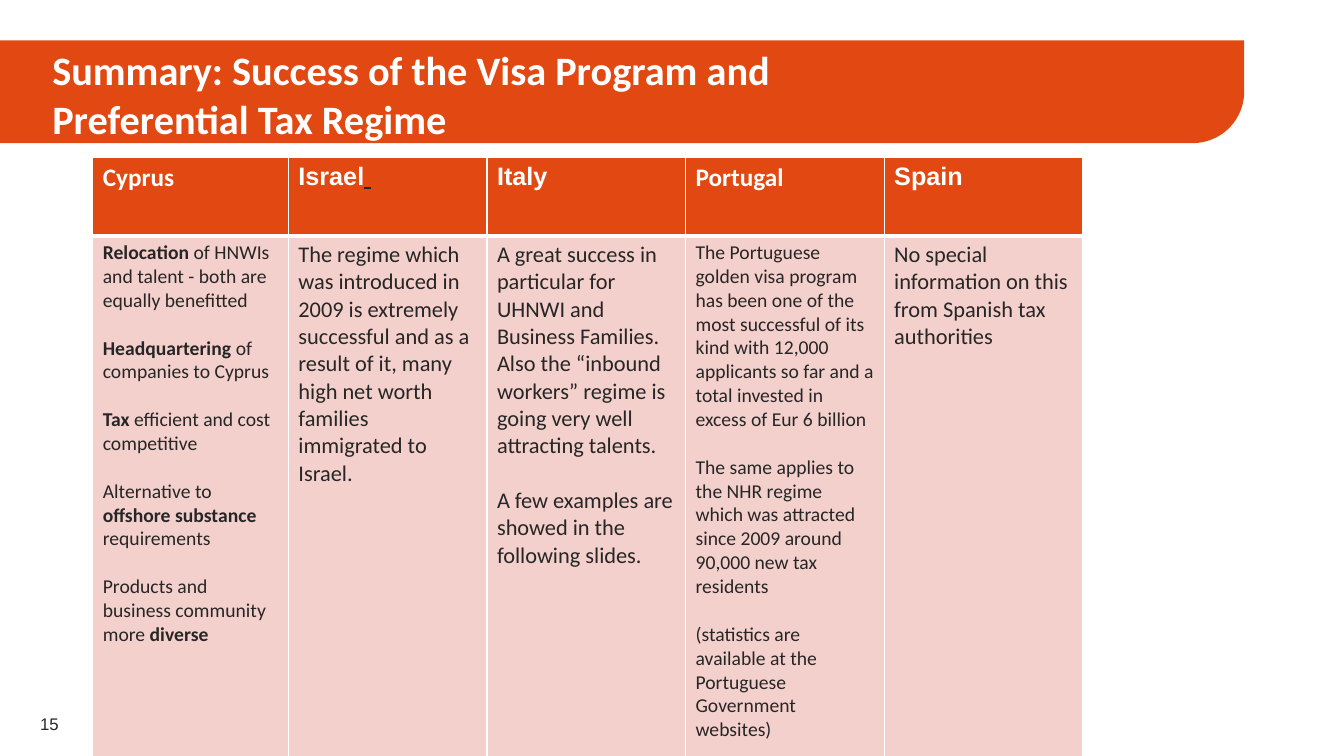
"""Build a summary slide comparing visa programs and tax regimes by country."""
import pptx
import pptx.dml.color
import pptx.enum.shapes
import pptx.enum.text
import pptx.oxml
import pptx.oxml.ns
import pptx.util

Inches = pptx.util.Inches
Pt = pptx.util.Pt
ANCHOR = pptx.enum.text.MSO_ANCHOR

COLORS = {"accent": "E24912", "cell": "F4D0CC", "text": "262626", "white": "FFFFFF"}
LINE_HEIGHT = 1.22

HEADERS = [
    ("Calibri", ["Cyprus"]),
    ("Arial", ["Israel", " "]),
    ("Arial", ["Italy"]),
    ("Calibri", ["Portugal"]),
    ("Arial", ["Spain"]),
]
BODIES = [
    (14, [
        "*Relocation* of HNWIs and talent - both are equally benefitted",
        "*Headquartering* of companies to Cyprus",
        "*Tax* efficient and cost competitive",
        "Alternative to *offshore substance *requirements",
        "Products and business community more *diverse*",
    ]),
    (16, [
        "The regime which was introduced in 2009 is extremely successful and as a "
        "result of it, many high net worth families immigrated to Israel.",
    ]),
    (16, [
        "A great success in particular for UHNWI and Business Families. Also the "
        "“inbound workers” regime is going very well attracting talents.",
        "A few examples are showed in the following slides.",
    ]),
    (14, [
        "The Portuguese golden visa program has been one of the most successful of its "
        "kind with 12,000 applicants so far and a total invested in excess of Eur 6 billion",
        "The same applies to the NHR regime which was attracted since 2009 around "
        "90,000 new tax residents",
        "(statistics are available at the Portuguese Government websites)",
    ]),
    (16, ["No special information on this from Spanish tax authorities"]),
]


class SlideBuilder:
    """Hold the style and current slide and add each kind of element."""

    def __init__(self, prs):
        self.slide = prs.slides.add_slide(prs.slide_layouts[6])

    def color(self, name):
        return pptx.dml.color.RGBColor.from_string(COLORS[name])

    def run(self, p, text, color, **formats):
        r = p.add_run()
        r.text = text
        r.font.color.rgb = self.color(color)
        for name, value in formats.items():
            setattr(r.font, name, value)

    def banner(self, left, top, width, height):
        kind = pptx.enum.shapes.MSO_SHAPE.ROUND_1_RECTANGLE
        sp = self.slide.shapes.add_shape(
            kind, Inches(left), Inches(top), Inches(width), Inches(height))
        sp.adjustments[0] = 0.5
        sp.shadow.inherit = False
        sp.fill.solid()
        sp.fill.fore_color.rgb = self.color("accent")
        sp.line.fill.background()
        sp._element.spPr.get_or_add_xfrm().set("flipV", "1")

    def text(self, left, top, width, height, text, color, **formats):
        sp = self.slide.shapes.add_textbox(
            Inches(left), Inches(top), Inches(width), Inches(height))
        tf = sp.text_frame
        tf.word_wrap = True
        tf.vertical_anchor = ANCHOR.MIDDLE
        self.run(tf.paragraphs[0], text, color, **formats)

    def table(self, left, top, widths, heights):
        frame = self.slide.shapes.add_table(
            len(heights), len(widths), Inches(left), Inches(top),
            Inches(sum(widths)), Inches(sum(heights)))
        table = frame.table
        table.horz_banding = False
        for column, width in zip(table.columns, widths):
            column.width = Inches(width)
        for row, height in zip(table.rows, heights):
            row.height = Inches(height)
        return table

    def style_cell(self, cell, fill, **borders):
        cell.fill.solid()
        cell.fill.fore_color.rgb = self.color(fill)
        tc_pr = cell._tc.get_or_add_tcPr()
        for i, side in enumerate("LRTB"):
            width = Pt(borders.get(side, 1))
            tc_pr.insert(i, pptx.oxml.parse_xml(
                f'<a:ln{side} {pptx.oxml.ns.nsdecls("a")} w="{width}"><a:solidFill>'
                f'<a:srgbClr val="{COLORS["white"]}"/></a:solidFill></a:ln{side}>'))

    def header_cell(self, cell, font, texts):
        self.style_cell(cell, "accent", B=3)
        p = cell.text_frame.paragraphs[0]
        for text in texts:
            blank = text.isspace()
            self.run(p, text, "text" if blank else "white",
                     size=Pt(18), name=font, bold=True, underline=blank)

    def body_cell(self, cell, size, paragraphs):
        self.style_cell(cell, "cell", T=3)
        tf = cell.text_frame
        for i, text in enumerate(paragraphs):
            p = tf.add_paragraph() if i else tf.paragraphs[0]
            if i:
                p.space_before = Pt(round(size * LINE_HEIGHT, 1))
            for j, part in enumerate(text.split("*")):
                if part:
                    self.run(p, part, "text", size=Pt(size), name="Calibri", bold=j % 2 == 1)


def main():
    prs = pptx.Presentation()
    prs.slide_width, prs.slide_height = Inches(13.33), Inches(7.5)
    s = SlideBuilder(prs)
    s.banner(0, 0.4, 12.34, 1.02)
    s.text(0.42, 0.48, 8.78, 0.9,
           "Summary: Success of the Visa Program and Preferential Tax Regime",
           "white", size=Pt(28.8), name="Calibri", bold=True)
    s.text(0.3, 6.98, 0.63, 0.4, "15", "text", size=Pt(12), name="Arial")
    table = s.table(0.92, 1.56, [1.94] + [1.97] * 4, [0.78, 5.22])
    for column, (header, body) in enumerate(zip(HEADERS, BODIES)):
        s.header_cell(table.cell(0, column), *header)
        s.body_cell(table.cell(1, column), *body)
    prs.save("out.pptx")


if __name__ == "__main__":
    main()
